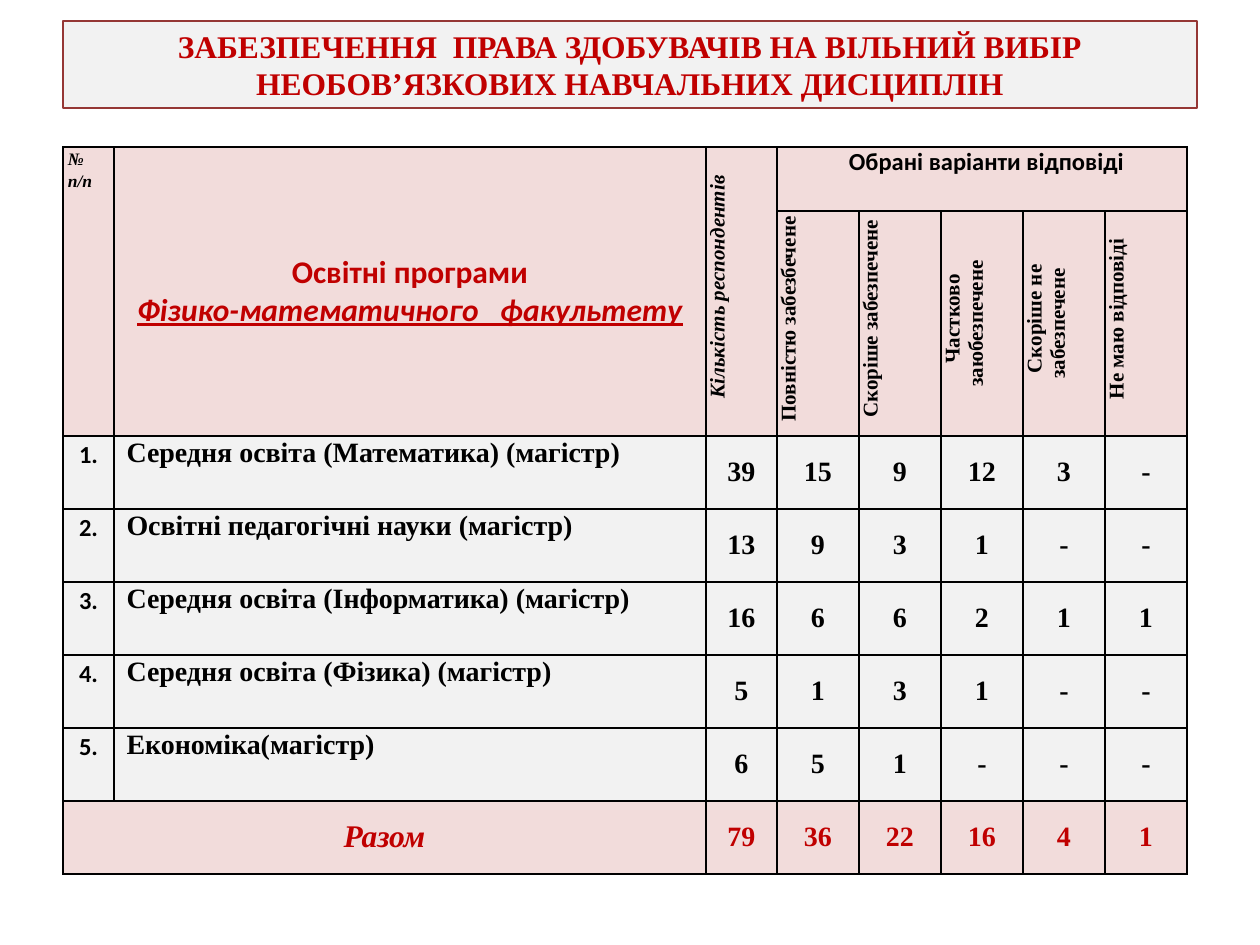
from lxml import etree
from pptx import Presentation
from pptx import util as u
from pptx.dml.color import RGBColor
from pptx.enum import shapes, text
from pptx.oxml import ns

PX = 914400 / 126
SERIF, SANS = "Times New Roman", "Calibri"
RED, BLACK, PINK, GREY = "C00000", "000000", "F2DCDB", "F2F2F2"
CENTER, MIDDLE = text.PP_ALIGN.CENTER, text.MSO_ANCHOR.MIDDLE


def px(n):
    return u.Emu(round(n * PX))


def write(frame, lines, size, font=SERIF, color=BLACK, italics=(False,),
          align=CENTER, spacing=None, indent=0):
    """Fill a text frame, one paragraph per line; italics cycles over lines."""
    for i, line in enumerate(lines):
        para = frame.paragraphs[0] if i == 0 else frame.add_paragraph()
        para.alignment = align
        if spacing:
            para.line_spacing = spacing
        if indent:
            para._p.get_or_add_pPr().set("indent", str(px(indent)))
        run = para.add_run()
        run.text = line
        run.font.size, run.font.name = u.Pt(size), font
        run.font.bold, run.font.italic = True, italics[i % len(italics)]
        run.font.color.rgb = RGBColor.from_string(color)


prs = Presentation()
prs.slide_width, prs.slide_height = px(1260), px(945)
slide = prs.slides.add_slide(prs.slide_layouts[6])

# Heading
heading = slide.shapes.add_shape(shapes.MSO_SHAPE.RECTANGLE, px(63), px(21), px(1134), px(87))
heading.shadow.inherit = False
heading.fill.solid()
heading.fill.fore_color.rgb = RGBColor.from_string(GREY)
heading.line.color.rgb = RGBColor.from_string("953735")
heading.line.width = u.Pt(1)
heading.text_frame.word_wrap = True
heading.text_frame.vertical_anchor = MIDDLE
write(heading.text_frame,
      ["ЗАБЕЗПЕЧЕННЯ  ПРАВА ЗДОБУВАЧІВ НА ВІЛЬНИЙ ВИБІР НЕОБОВ’ЯЗКОВИХ НАВЧАЛЬНИХ ДИСЦИПЛІН"],
      18, color=RED)

# Survey content
answers = ["Повністю забезбечене", "Скоріше забезпечене", "Частково заюбезпечене",
           "Скоріше не забезпечене", "Не маю відповіді"]
programs = [
    ("Середня освіта (Математика) (магістр)", "39 15 9 12 3 -"),
    ("Освітні педагогічні науки (магістр)", "13 9 3 1 - -"),
    ("Середня освіта (Інформатика) (магістр)", "16 6 6 2 1 1"),
    ("Середня освіта (Фізика) (магістр)", "5 1 3 1 - -"),
    ("Економіка(магістр)", "6 5 1 - - -"),
]
totals = "79 36 22 16 4 1"

# Table grid
col_widths = [51, 592, 71] + [82] * len(answers)
row_heights = [64, 225] + [73] * (len(programs) + 1)
last = len(row_heights) - 1
survey = slide.shapes.add_table(len(row_heights), len(col_widths), px(63), px(147),
                                px(sum(col_widths)), px(sum(row_heights))).table
survey.first_row = survey.horz_banding = False
for col, width in zip(survey.columns, col_widths):
    col.width = px(width)
for row, height in zip(survey.rows, row_heights):
    row.height = px(height)

# Borders, fills and margins
for r in range(len(row_heights)):
    for c in range(len(col_widths)):
        cell = survey.cell(r, c)
        tc_pr = cell._tc.get_or_add_tcPr()
        for side in ("a:lnL", "a:lnR", "a:lnT", "a:lnB"):
            border = etree.SubElement(tc_pr, ns.qn(side), w=str(u.Pt(1)))
            paint = etree.SubElement(border, ns.qn("a:solidFill"))
            etree.SubElement(paint, ns.qn("a:srgbClr"), val=BLACK)
        cell.fill.solid()
        cell.fill.fore_color.rgb = RGBColor.from_string(GREY if 2 <= r < last else PINK)
        if r < 2 or c != 2 and (r == last or c != 1):
            cell.margin_left = cell.margin_right = px(9 if r >= 2 and c > 2 else 5)
            cell.margin_top = cell.margin_bottom = 0

# Merged cells
for c in range(3):
    survey.cell(0, c).merge(survey.cell(1, c))
survey.cell(0, 3).merge(survey.cell(0, 7))
survey.cell(last, 0).merge(survey.cell(last, 1))

# Header
write(survey.cell(0, 0).text_frame, ["№", "п/п"], 10, italics=(True,), align=None, spacing=1.15)
faculty = survey.cell(0, 1)
faculty.vertical_anchor = MIDDLE
write(faculty.text_frame, ["Освітні програми", "Фізико-математичного   факультету"],
      18, SANS, RED, italics=(False, True))
faculty.text_frame.paragraphs[1].runs[0].font.underline = True
respondents = survey.cell(0, 2)
respondents.vertical_anchor = MIDDLE
respondents._tc.tcPr.set("vert", "vert270")
write(respondents.text_frame, ["Кількість респондентів"], 12, italics=(True,), indent=9)
write(survey.cell(0, 3).text_frame, ["Обрані варіанти відповіді"], 14, SANS, indent=9)
for c, answer in enumerate(answers, 3):
    cell = survey.cell(1, c)
    cell._tc.tcPr.set("vert", "vert270")
    write(cell.text_frame, [answer], 12, indent=9)

# Program names
for r, (program, counts) in enumerate(programs, 2):
    write(survey.cell(r, 0).text_frame, [f"{r - 1}."], 14, SANS, spacing=1.15)
    write(survey.cell(r, 1).text_frame, [program], 16, align=None, spacing=0.8)

# Total label
total = survey.cell(last, 0)
total.vertical_anchor = MIDDLE
write(total.text_frame, ["Разом"], 18, color=RED, italics=(True,))

# Counts and totals
for r, counts in enumerate([counts for _, counts in programs] + [totals], 2):
    for c, count in enumerate(counts.split(), 2):
        cell = survey.cell(r, c)
        cell.vertical_anchor = MIDDLE
        write(cell.text_frame, [count], 16, color=RED if r == last else BLACK)

prs.save("out.pptx")
